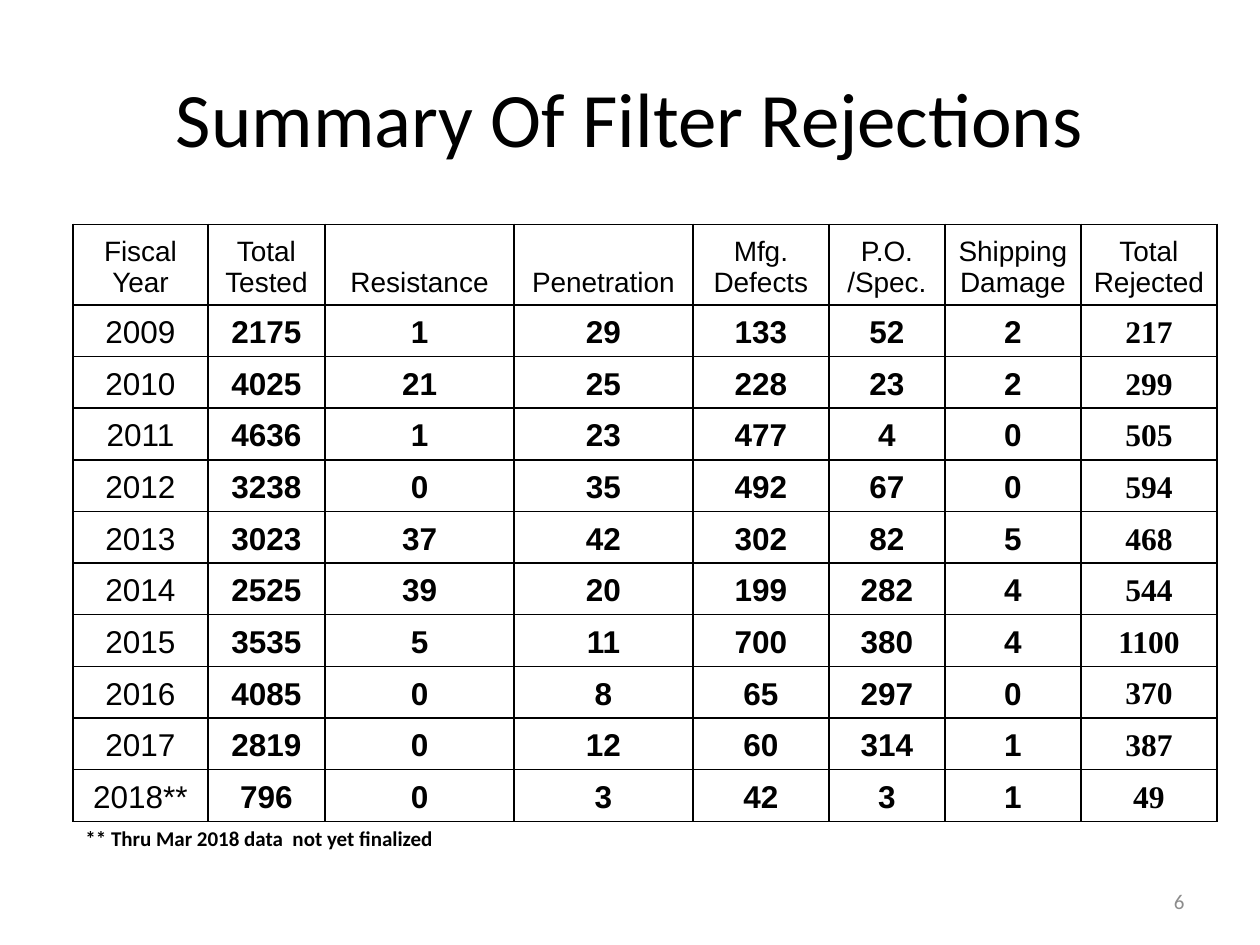
from dataclasses import dataclass

from lxml.etree import SubElement
from pptx import Presentation
from pptx.dml.color import RGBColor
from pptx.enum.text import MSO_ANCHOR as Anchor, PP_ALIGN as Align
from pptx.oxml.ns import qn
from pptx.util import Inches, Pt

SLIDE_WIDTH, SLIDE_HEIGHT = 10, 7.5
BLACK, WHITE, GRAY = "000000", "FFFFFF", "8C8C8C"

TABLE_LEFT, TABLE_TOP = 0.58, 1.78
COLUMN_WIDTHS = [1.07, 0.93, 1.5, 1.42, 1.08, 0.92, 1.08, 1.08]
HEADER_HEIGHT, YEAR_HEIGHT = 0.64, 0.41

HEADINGS = ["Fiscal Year", "Total Tested", "Resistance", "Penetration",
            "Mfg. Defects", "P.O. /Spec.", "Shipping Damage", "Total\nRejected"]
REJECTIONS = [
    ("2009", 2175, 1, 29, 133, 52, 2, 217),
    ("2010", 4025, 21, 25, 228, 23, 2, 299),
    ("2011", 4636, 1, 23, 477, 4, 0, 505),
    ("2012", 3238, 0, 35, 492, 67, 0, 594),
    ("2013", 3023, 37, 42, 302, 82, 5, 468),
    ("2014", 2525, 39, 20, 199, 282, 4, 544),
    ("2015", 3535, 5, 11, 700, 380, 4, 1100),
    ("2016", 4085, 0, 8, 65, 297, 0, 370),
    ("2017", 2819, 0, 12, 60, 314, 1, 387),
    ("2018**", 796, 0, 3, 42, 3, 1, 49),
]


@dataclass(frozen=True)
class TextStyle:
    font: str
    size: float
    bold: bool = False
    color: str = BLACK
    align: Align = Align.CENTER


@dataclass(frozen=True)
class Caption:
    text: str
    left: float
    top: float
    width: float
    height: float
    style: TextStyle
    anchor: Anchor = Anchor.MIDDLE


HEADING = TextStyle("Arial", 16)
YEAR = TextStyle("Arial", 18)
COUNT = TextStyle("Arial", 18, bold=True)
TOTAL = TextStyle("Times New Roman", 18, bold=True)

CAPTIONS = [
    Caption("Summary Of Filter Rejections", 0.5, 0.3, 9, 1.25,
            TextStyle("Calibri", 44)),
    Caption("** Thru Mar 2018 data  not yet finalized", 0.58, 6.5, 4.17, 0.3,
            TextStyle("Calibri", 12, bold=True, align=Align.LEFT), Anchor.TOP),
    Caption("6", 7.17, 6.95, 2.33, 0.4,
            TextStyle("Calibri", 12, color=GRAY, align=Align.RIGHT)),
]


def rgb(color: str) -> RGBColor:
    return RGBColor.from_string(color)


def write(frame, text: str, style: TextStyle) -> None:
    frame.text = text
    frame.word_wrap = True
    for paragraph in frame.paragraphs:
        paragraph.alignment = style.align
        for run in paragraph.runs:
            run.font.name = style.font
            run.font.size = Pt(style.size)
            run.font.bold = style.bold
            run.font.color.rgb = rgb(style.color)


def add_caption(slide, caption: Caption) -> None:
    box = slide.shapes.add_textbox(Inches(caption.left), Inches(caption.top),
                                   Inches(caption.width), Inches(caption.height))
    write(box.text_frame, caption.text, caption.style)
    box.text_frame.vertical_anchor = caption.anchor


def add_borders(cell, color: str = BLACK, width: float = 1) -> None:
    """Draw all four cell edges; call before filling, as the schema puts lines first."""
    properties = cell._tc.get_or_add_tcPr()
    for edge in ("a:lnL", "a:lnR", "a:lnT", "a:lnB"):
        line = SubElement(properties, qn(edge), w=str(Pt(width)))
        fill = SubElement(line, qn("a:solidFill"))
        SubElement(fill, qn("a:srgbClr"), val=color)


def fill_cell(cell, text: str, style: TextStyle) -> None:
    write(cell.text_frame, text, style)
    cell.vertical_anchor = Anchor.BOTTOM
    add_borders(cell)
    if style == COUNT:
        cell.fill.solid()
        cell.fill.fore_color.rgb = rgb(WHITE)
    else:
        cell.fill.background()


def add_rejection_table(slide) -> None:
    row_heights = [HEADER_HEIGHT] + [YEAR_HEIGHT] * len(REJECTIONS)
    table = slide.shapes.add_table(
        len(row_heights), len(COLUMN_WIDTHS), Inches(TABLE_LEFT), Inches(TABLE_TOP),
        Inches(sum(COLUMN_WIDTHS)), Inches(sum(row_heights))).table
    table.horz_banding = False
    table.first_row = False
    for column, width in zip(table.columns, COLUMN_WIDTHS):
        column.width = Inches(width)
    for row, height in zip(table.rows, row_heights):
        row.height = Inches(height)

    heading_styles = [HEADING] * len(HEADINGS)
    year_styles = [YEAR] + [COUNT] * (len(HEADINGS) - 2) + [TOTAL]
    for row, values in zip(table.rows, [HEADINGS, *REJECTIONS]):
        styles = heading_styles if values is HEADINGS else year_styles
        for cell, value, style in zip(row.cells, values, styles):
            fill_cell(cell, str(value), style)


def main() -> None:
    deck = Presentation()
    deck.slide_width, deck.slide_height = Inches(SLIDE_WIDTH), Inches(SLIDE_HEIGHT)
    slide = deck.slides.add_slide(deck.slide_layouts[6])
    for caption in CAPTIONS:
        add_caption(slide, caption)
    add_rejection_table(slide)
    deck.save("out.pptx")


if __name__ == "__main__":
    main()
